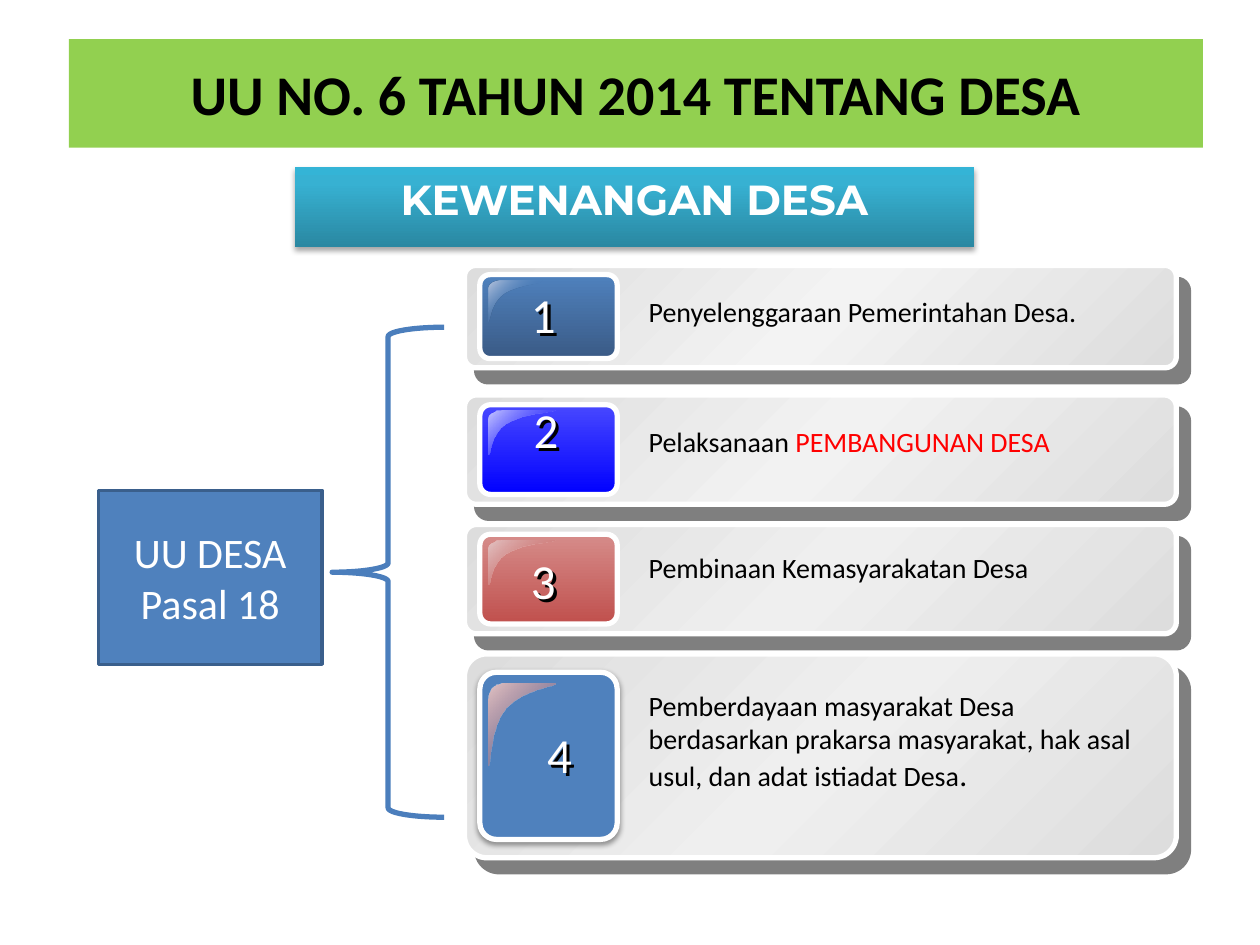
from dataclasses import dataclass
from typing import NamedTuple, Optional

from lxml.etree import SubElement
from pptx import Presentation
from pptx.dml.color import RGBColor
from pptx.enum.shapes import MSO_SHAPE
from pptx.enum.text import MSO_ANCHOR, MSO_AUTO_SIZE, PP_ALIGN
from pptx.oxml.ns import qn
from pptx.util import Pt


@dataclass(frozen=True)
class Theme:
    font: str = "Calibri"
    heading_font: str = "Montserrat"
    white: str = "FFFFFF"
    black: str = "000000"
    red: str = "FF0000"
    blue: str = "4F81BD"
    blue_edge: str = "3A5F8C"
    brace: str = "4B7EBC"
    green: str = "92D050"
    panel_edge: str = "DDDDDD"
    banner_size: float = 32
    heading_size: float = 24
    number_size: float = 28
    label_size: float = 16
    stop_size: float = 18


class Box(NamedTuple):
    left: float
    top: float
    width: float
    height: float

    def lengths(self):
        return [Pt(round(value, 2)) for value in self]


class Stop(NamedTuple):
    position: int
    color: str
    alpha: int = 100


class Shadow(NamedTuple):
    alpha: int
    blur: float
    distance: float
    angle: int


class Piece(NamedTuple):
    text: str
    color: str
    size: float


@dataclass(frozen=True)
class Authority:
    number: str
    pieces: list[Piece]
    height: float
    panel_middle: str
    badge: list[Stop]
    gloss: list[Stop]
    number_box: Box
    label_top: float
    badge_shadow: Optional[Shadow] = None


THEME = Theme()
PANEL_SHADOW = Shadow(50, 0, 10.6, 49)
NUMBER_SHADOW = Shadow(100, 0, 2.5, 45)
LIST_TOP, PITCH = 151.7, 74
# Gloss outline as fractions of its width and height: a start, a curve, a line, two curves
GLOSS = ((0.19, 0), (0.09, 0), (0, 0.08), (0, 0.2), (0, 0.97), (0.04, 0.98), (0.02, 0.52),
         (0.26, 0.29), (0.52, 0.06), (1, 0.04), (0.98, 0))
GLOSS_CURVES = (0, 4, 7)


def add_color(parent, color: str, alpha: int) -> None:
    node = SubElement(parent, qn("a:srgbClr"), val=color)
    if alpha < 100:
        SubElement(node, qn("a:alpha"), val=str(alpha * 1000))


def paint(shape, stops: list[Stop], angle: int = 0) -> None:
    """Fill with one colour, or with a gradient turning clockwise by angle."""
    if len(stops) == 1:
        shape.fill.solid()
        shape.fill.fore_color.rgb = RGBColor.from_string(stops[0].color)
        return
    shape.fill.gradient()
    gradient = shape._element.spPr.find(qn("a:gradFill"))
    for child in list(gradient):
        gradient.remove(child)
    stop_list = SubElement(gradient, qn("a:gsLst"))
    for stop in stops:
        node = SubElement(stop_list, qn("a:gs"), pos=str(stop.position * 1000))
        add_color(node, stop.color, stop.alpha)
    SubElement(gradient, qn("a:lin"), ang=str(angle * 60000), scaled="0")


def outline(shape, color: str = "", width: float = 0) -> None:
    if not color:
        shape.line.fill.background()
        return
    shape.line.color.rgb = RGBColor.from_string(color)
    shape.line.width = Pt(width)


def set_shadow(shape, shadow: Optional[Shadow] = None) -> None:
    shape.shadow.inherit = False
    if shadow:
        effects = shape._element.spPr.find(qn("a:effectLst"))
        node = SubElement(effects, qn("a:outerShdw"), blurRad=str(Pt(shadow.blur)),
                          dist=str(Pt(shadow.distance)), dir=str(shadow.angle * 60000),
                          algn="tl", rotWithShape="0")
        add_color(node, THEME.black, shadow.alpha)


def add_run(paragraph, piece: Piece, font: str = THEME.font, bold: bool = False) -> None:
    run = paragraph.add_run()
    run.text = piece.text
    run.font.name, run.font.size, run.font.bold = font, Pt(piece.size), bold
    run.font.color.rgb = RGBColor.from_string(piece.color)


def add_panel(slide, kind, box: Box, stops: list[Stop], angle: int = 0,
              edge: str = "", width: float = 0, shadow: Optional[Shadow] = None):
    shape = slide.shapes.add_shape(kind, *box.lengths())
    paint(shape, stops, angle)
    outline(shape, edge, width)
    set_shadow(shape, shadow)
    return shape


def add_text(slide, box: Box, pieces: list[Piece], align=PP_ALIGN.LEFT):
    text = slide.shapes.add_textbox(*box.lengths())
    text.text_frame.word_wrap = True
    paragraph = text.text_frame.paragraphs[0]
    paragraph.alignment = align
    for piece in pieces:
        add_run(paragraph, piece)
    return text


def add_gloss(slide, box: Box, stops: list[Stop]) -> None:
    points = [(Pt(box.left + x * box.width), Pt(box.top + y * box.height)) for x, y in GLOSS]
    builder = slide.shapes.build_freeform(*points[0], scale=1.0)
    builder.add_line_segments(points[1:], close=True)
    gloss = builder.convert_to_shape()
    # Join each run of three segments into one cubic curve
    segments = list(gloss._element.iter(qn("a:lnTo")))
    for start in GLOSS_CURVES:
        cubic = segments[start].makeelement(qn("a:cubicBezTo"), {})
        segments[start].addprevious(cubic)
        for segment in segments[start:start + 3]:
            cubic.append(segment[0])
            segment.getparent().remove(segment)
    paint(gloss, stops, 45)
    outline(gloss)
    set_shadow(gloss)


def add_authority(slide, item: Authority, top: float) -> None:
    panel = add_panel(slide, MSO_SHAPE.ROUNDED_RECTANGLE, Box(265.4, top, 406.8, item.height),
                      [Stop(0, THEME.panel_edge), Stop(50, item.panel_middle),
                       Stop(100, THEME.panel_edge)], 45, THEME.white, 3, PANEL_SHADOW)
    panel.adjustments[0] = 0.11
    inset = 0.09 * item.height
    tall = item.height - 2 * inset
    badge = add_panel(slide, MSO_SHAPE.ROUNDED_RECTANGLE, Box(274.2, top + inset, 78.5, tall),
                      item.badge, 90, THEME.white, 3, item.badge_shadow)
    badge.adjustments[0] = 0.12
    add_gloss(slide, Box(279.4, top + inset + 0.07 * tall, 39, tall / 2), item.gloss)
    number = Piece(item.number, THEME.white, THEME.number_size)
    set_shadow(add_text(slide, item.number_box, [number], PP_ALIGN.CENTER), NUMBER_SHADOW)
    add_text(slide, Box(363.6, item.label_top, 301, 55), item.pieces)


def label(text: str, color: str = THEME.black) -> Piece:
    return Piece(text, color, THEME.label_size)


PINK_GLOSS = [Stop(0, "E3C4C4"), Stop(100, "C0504D", 0)]
AUTHORITIES = [
    Authority("1", [label("Penyelenggaraan Pemerintahan Desa.")], 58.5, "F3F3F3",
              [Stop(0, THEME.blue), Stop(100, "3A5A85")],
              [Stop(0, "BBC7DE"), Stop(50, THEME.blue, 0), Stop(100, "BBC7DE", 0)],
              Box(294.5, 159, 32, 50), 165),
    Authority("2", [label("Pelaksanaan "), label("PEMBANGUNAN DESA", THEME.red)], 62.5,
              "F2F2F2", [Stop(0, "4848FF"), Stop(100, "0000FF")],
              [Stop(0, "C9C9FF"), Stop(100, "0000FF", 0)], Box(289, 224.6, 46, 50), 239),
    Authority("3", [label("Pembinaan Kemasyarakatan Desa")], 62.5, "EFEFEF",
              [Stop(0, "D68C8A"), Stop(100, "C0504D")], PINK_GLOSS,
              Box(294.5, 311, 32, 50), 311),
    Authority("4", [label("Pemberdayaan masyarakat Desa berdasarkan prakarsa masyarakat, "
                          "hak asal usul, dan adat istiadat Desa"),
                    Piece(".", THEME.black, THEME.stop_size)], 116.5, "EFEFEF",
              [Stop(0, THEME.blue)], PINK_GLOSS, Box(301.7, 410.4, 36, 50), 389.7,
              Shadow(38, 3.1, 1.6, 90)),
]


def main() -> None:
    deck = Presentation()
    deck.slide_width, deck.slide_height = Pt(720), Pt(540)
    slide = deck.slides.add_slide(deck.slide_layouts[5])

    # Heading
    heading = slide.shapes.title
    heading.left, heading.top, heading.width, heading.height = Box(168.5, 95.5, 388, 45.4).lengths()
    paint(heading, [Stop(0, "2A88A2"), Stop(80, "37B1D2"), Stop(100, "34B4D6")], 270)
    set_shadow(heading, Shadow(35, 3.1, 1.8, 90))
    frame = heading.text_frame
    frame.vertical_anchor, frame.auto_size = MSO_ANCHOR.TOP, MSO_AUTO_SIZE.NONE
    frame.paragraphs[0].alignment = PP_ALIGN.CENTER
    add_run(frame.paragraphs[0], Piece("KEWENANGAN DESA", THEME.white, THEME.heading_size),
            THEME.heading_font, True)

    # Numbered authorities
    for index, item in enumerate(AUTHORITIES):
        add_authority(slide, item, LIST_TOP + index * PITCH)

    # Legal basis and brace
    basis = add_panel(slide, MSO_SHAPE.RECTANGLE, Box(56.2, 280.2, 127.8, 99.4),
                      [Stop(0, THEME.blue)], edge=THEME.blue_edge, width=2).text_frame
    for paragraph, line in zip((basis.paragraphs[0], basis.add_paragraph()),
                               ("UU DESA", "Pasal 18")):
        paragraph.alignment = PP_ALIGN.CENTER
        add_run(paragraph, Piece(line, THEME.white, THEME.heading_size))
    brace = slide.shapes.add_shape(MSO_SHAPE.LEFT_BRACE, *Box(189.8, 187, 64, 280).lengths())
    brace.fill.background()
    outline(brace, THEME.brace, 3)
    set_shadow(brace)

    # Law banner
    banner = add_panel(slide, MSO_SHAPE.RECTANGLE, Box(39.4, 22.4, 648, 62), [Stop(0, THEME.green)])
    law = banner.text_frame.paragraphs[0]
    law.alignment = PP_ALIGN.CENTER
    add_run(law, Piece("UU NO. 6 TAHUN 2014 TENTANG DESA", THEME.black, THEME.banner_size), bold=True)

    deck.save("out.pptx")


if __name__ == "__main__":
    main()
